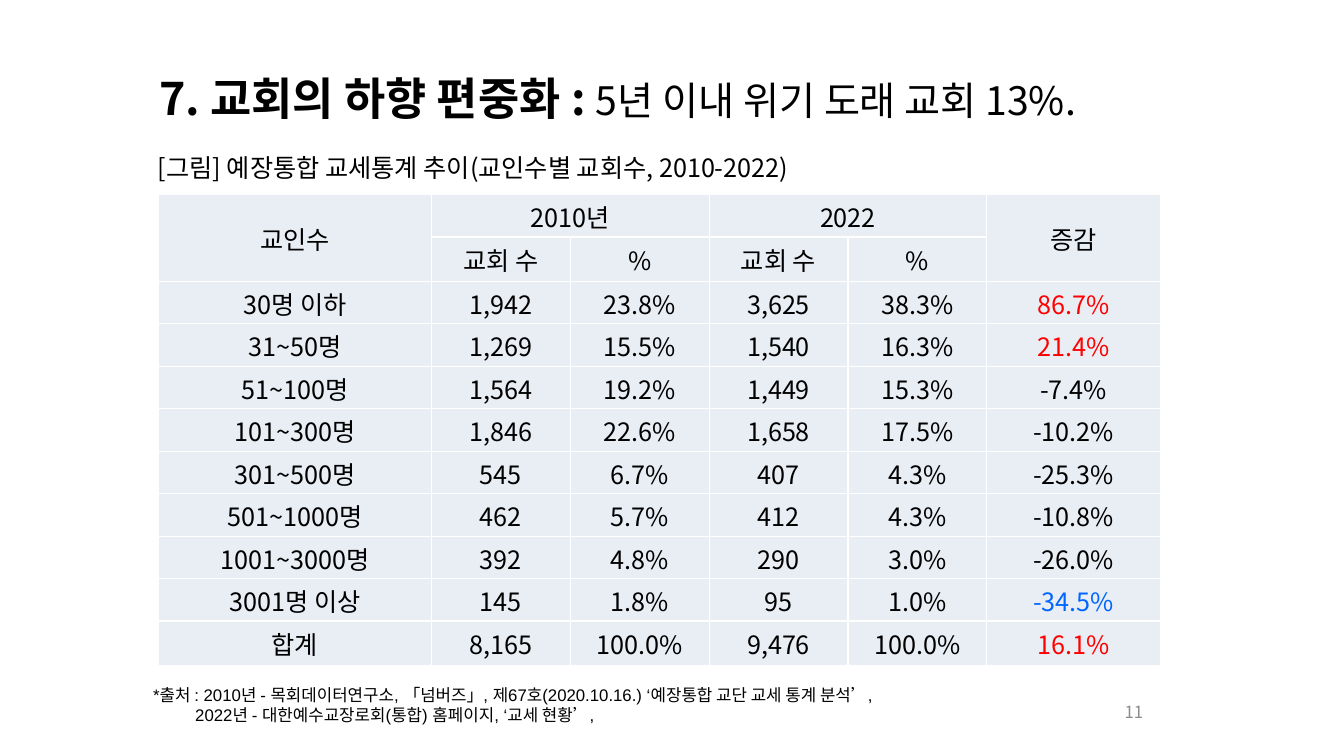
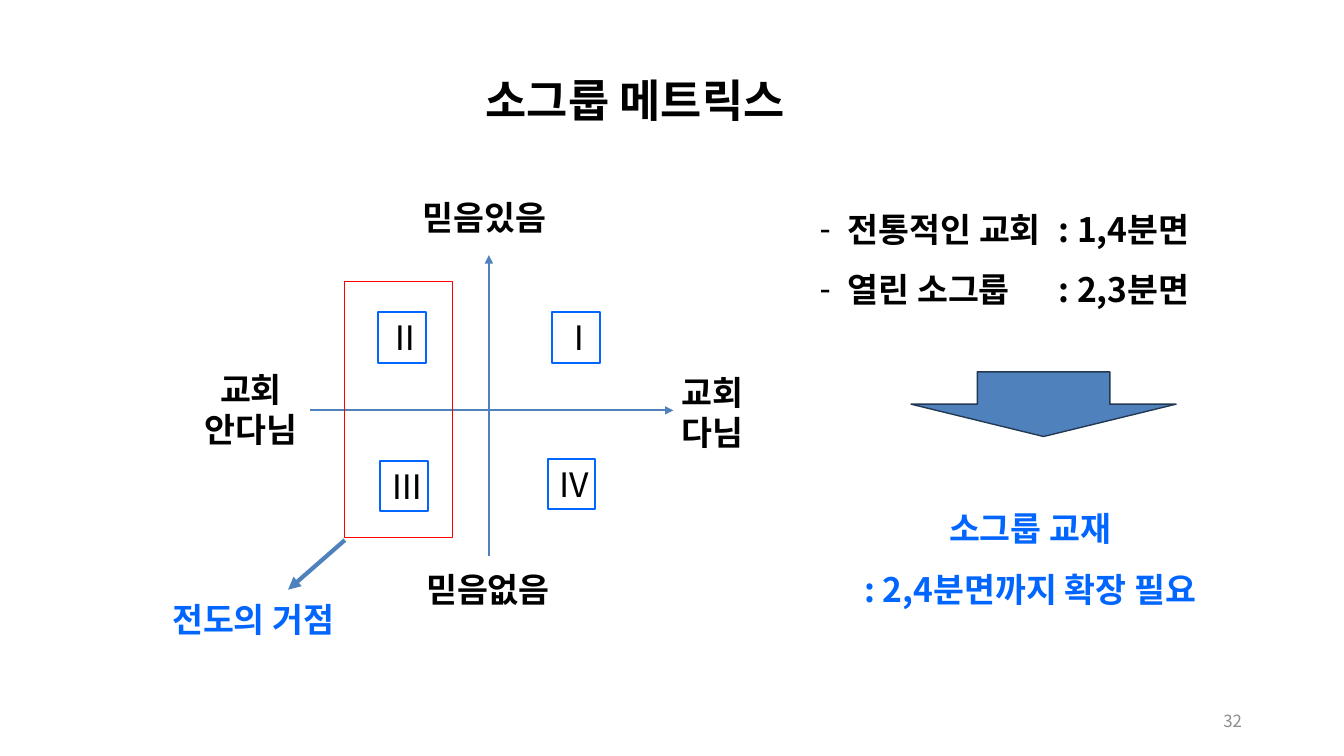
from pptx import Presentation
from pptx.util import Cm, Pt
from pptx.dml.color import RGBColor
from pptx.enum.shapes import MSO_CONNECTOR, MSO_SHAPE
from pptx.enum.text import MSO_ANCHOR, MSO_AUTO_SIZE, PP_ALIGN
from pptx.oxml.ns import qn
from lxml.etree import SubElement

COLORS = {"black": "000000", "gray": "8C8C8C", "red": "FF0000", "blue": "0066FF",
          "steel": "4F81BD", "navy": "233953", "cell": "E9EDF4"}
RGB = {name: RGBColor.from_string(value) for name, value in COLORS.items()}
FONT = "Noto Sans CJK KR"
LEFT, CENTER, RIGHT = PP_ALIGN.LEFT, PP_ALIGN.CENTER, PP_ALIGN.RIGHT


def style(tf, size, color="black", bold=False, align=LEFT, font=FONT, spacing=1.0):
    for p in tf.paragraphs:
        p.alignment = align
        p.line_spacing = spacing
        p.space_before = Pt(0)
        for r in p.runs:
            r.font.size = Pt(size)
            r.font.bold = bold
            r.font.name = font
            r.font.color.rgb = RGB[color]
            SubElement(r.font._element, qn("a:ea")).set("typeface", FONT)


def add_text(s, box, text, size, **look):
    tf = s.shapes.add_textbox(*map(Cm, box)).text_frame
    tf.word_wrap = True
    tf.text = text
    style(tf, size, **look)
    return tf


prs = Presentation()
prs.slide_width, prs.slide_height = Cm(33.87), Cm(19.05)

# Shared titles and page numbers
pages = [
    (5, "7. 교회의 하향 편중화 : ", (3.76, 1.52, 27.8, 1.88), LEFT, "11", (23.34, 17.42, 5.72, 1.02)),
    (1, "소그룹 메트릭스", (5.16, 1.42, 21.7, 2.16), CENTER, "32", (23.93, 17.65, 7.62, 1.02)),
]
slides = []
for layout, title, box, align, number, number_box in pages:
    s = prs.slides.add_slide(prs.slide_layouts[layout])
    sp = s.shapes.title
    sp.left, sp.top, sp.width, sp.height = map(Cm, box)
    tf = sp.text_frame
    tf.text = title
    tf.auto_size = MSO_AUTO_SIZE.NONE
    tf.vertical_anchor = MSO_ANCHOR.MIDDLE
    style(tf, 32, bold=True, align=align)
    tf = add_text(s, number_box, number, 12, color="gray", align=RIGHT)
    tf.vertical_anchor = MSO_ANCHOR.MIDDLE
    slides.append(s)

# Slide 1: second part of the title, caption and source
s = slides[0]
tf = s.shapes.title.text_frame
r = tf.paragraphs[0].add_run()
r.text = "5년 이내 위기 도래 교회 13%."
r.font.size, r.font.bold, r.font.name = Pt(28), False, FONT
r.font.color.rgb = RGB["black"]
SubElement(r.font._element, qn("a:ea")).set("typeface", FONT)

add_text(s, (3.73, 3.71, 20.1, 1.02), "[그림] 예장통합 교세통계 추이(교인수별 교회수, 2010-2022)", 18)
tf = add_text(s, (3.61, 17.12, 23.85, 1.27),
              "*출처 : 2010년 - 목회데이터연구소, 「넘버즈」, 제67호(2020.10.16.) ‘예장통합 교단 교세 통계 분석’,\n"
              "2022년 - 대한예수교장로회(통합) 홈페이지, ‘교세 현황’,", 12, font="Arial")
tf.paragraphs[1]._p.get_or_add_pPr().set("marL", str(Cm(1.06)))

# Slide 1: table
rows = [
    ("교인수", "2010년", "", "2022", "", "증감"),
    ("", "교회 수", "%", "교회 수", "%", ""),
    ("30명 이하", "1,942", "23.8%", "3,625", "38.3%", "86.7%"),
    ("31~50명", "1,269", "15.5%", "1,540", "16.3%", "21.4%"),
    ("51~100명", "1,564", "19.2%", "1,449", "15.3%", "-7.4%"),
    ("101~300명", "1,846", "22.6%", "1,658", "17.5%", "-10.2%"),
    ("301~500명", "545", "6.7%", "407", "4.3%", "-25.3%"),
    ("501~1000명", "462", "5.7%", "412", "4.3%", "-10.8%"),
    ("1001~3000명", "392", "4.8%", "290", "3.0%", "-26.0%"),
    ("3001명 이상", "145", "1.8%", "95", "1.0%", "-34.5%"),
    ("합계", "8,165", "100.0%", "9,476", "100.0%", "16.1%"),
]
accents = {"86.7%": "red", "21.4%": "red", "16.1%": "red", "-34.5%": "blue"}
table = s.shapes.add_table(len(rows), 6, Cm(3.99), Cm(4.9), Cm(25.25), Cm(11.87)).table
table.first_row = table.horz_banding = False
for column, width in zip(table.columns, (6.88, 3.5, 3.5, 3.5, 3.5, 4.37)):
    column.width = Cm(width)
for i, row in enumerate(rows):
    table.rows[i].height = Cm(1.12 if i in (1, len(rows) - 1) else 1.07)
    for j, value in enumerate(row):
        cell = table.cell(i, j)
        cell.text = value
        cell.fill.solid()
        cell.fill.fore_color.rgb = RGB["cell"]
        cell.vertical_anchor = MSO_ANCHOR.MIDDLE
        cell.margin_left = cell.margin_right = cell.margin_top = Cm(0.03)
        cell.margin_bottom = 0
        style(cell.text_frame, 18, color=accents.get(value, "black"), align=CENTER)
for top, left, bottom, right in ((0, 0, 1, 0), (0, 1, 0, 2), (0, 3, 0, 4), (0, 5, 1, 5)):
    table.cell(top, left).merge(table.cell(bottom, right))

# Slide 2: axes and pointer arrow
s = slides[1]
arrows = [(7.82, 10.34, 16.97, 10.34, 1.5), (12.32, 14, 12.32, 6.43, 1.5), (8.69, 13.61, 7.26, 14.86, 3)]
for *ends, width in arrows:
    line = s.shapes.add_connector(MSO_CONNECTOR.STRAIGHT, *map(Cm, ends))
    line.line.color.rgb = RGB["steel"]
    line.line.width = Pt(width)
    SubElement(line.line._get_or_add_ln(), qn("a:tailEnd")).set("type", "triangle")
    SubElement(line._element.spPr, qn("a:effectLst"))

# Slide 2: axis labels and conclusions
labels = [
    ((16.92, 9.25, 2.24, 2.31), "교회\n다님", "black", LEFT, 1),
    ((10.41, 4.83, 3.94, 1.27), "믿음있음", "black", LEFT, 1),
    ((4.65, 9.17, 3.35, 2.31), "교회\n안다님", "black", CENTER, 1),
    ((10.49, 14.22, 3.94, 1.27), "믿음없음", "black", LEFT, 1),
    ((4.09, 14.96, 5.08, 1.27), "전도의 거점", "blue", LEFT, 1),
    ((21.11, 12.17, 9.7, 3.12), "소그룹 교재\n: 2,4분면까지 확장 필요", "blue", CENTER, 1.5),
]
for box, text, color, align, spacing in labels:
    add_text(s, box, text, 24, color=color, bold=True, align=align, spacing=spacing)

# Slide 2: quadrant numerals, frame and down arrow
shapes = [
    (MSO_SHAPE.RECTANGLE, (13.92, 7.87, 1.2, 1.27), "Ⅰ", None, "blue", 1.5),
    (MSO_SHAPE.RECTANGLE, (9.53, 7.87, 1.2, 1.27), "Ⅱ", None, "blue", 1.5),
    (MSO_SHAPE.RECTANGLE, (9.58, 11.61, 1.2, 1.27), "Ⅲ", None, "blue", 1.5),
    (MSO_SHAPE.RECTANGLE, (13.8, 11.56, 1.2, 1.27), "Ⅳ", None, "blue", 1.5),
    (MSO_SHAPE.RECTANGLE, (8.69, 7.09, 2.72, 6.45), "", None, "red", 0.5),
    (MSO_SHAPE.DOWN_ARROW, (22.96, 9.37, 6.68, 1.63), "", "steel", "navy", 1),
]
for kind, box, text, fill, color, width in shapes:
    sp = s.shapes.add_shape(kind, *map(Cm, box))
    sp.shadow.inherit = False
    if fill:
        sp.fill.solid()
        sp.fill.fore_color.rgb = RGB[fill]
    else:
        sp.fill.background()
    sp.line.color.rgb = RGB[color]
    sp.line.width = Pt(width)
    if text:
        sp.text_frame.text = text
        style(sp.text_frame, 24)

# Slide 2: dash list with aligned colons
sp = s.placeholders[1]
sp.left, sp.top, sp.width, sp.height = map(Cm, (20.4, 4.62, 10.6, 3.12))
tf = sp.text_frame
tf.auto_size = MSO_AUTO_SIZE.NONE
tf.text = "전통적인 교회\t: 1,4분면\n열린 소그룹\t: 2,3분면"
for p in tf.paragraphs:
    pPr = p._p.get_or_add_pPr()
    pPr.set("marL", str(Cm(0.71)))
    pPr.set("indent", str(-Cm(0.71)))
    SubElement(pPr, qn("a:buChar")).set("char", "-")
    tab = SubElement(SubElement(pPr, qn("a:tabLst")), qn("a:tab"))
    tab.set("pos", str(Cm(6.02)))
    tab.set("algn", "l")
style(tf, 24, bold=True, spacing=1.5)

prs.save("out.pptx")
